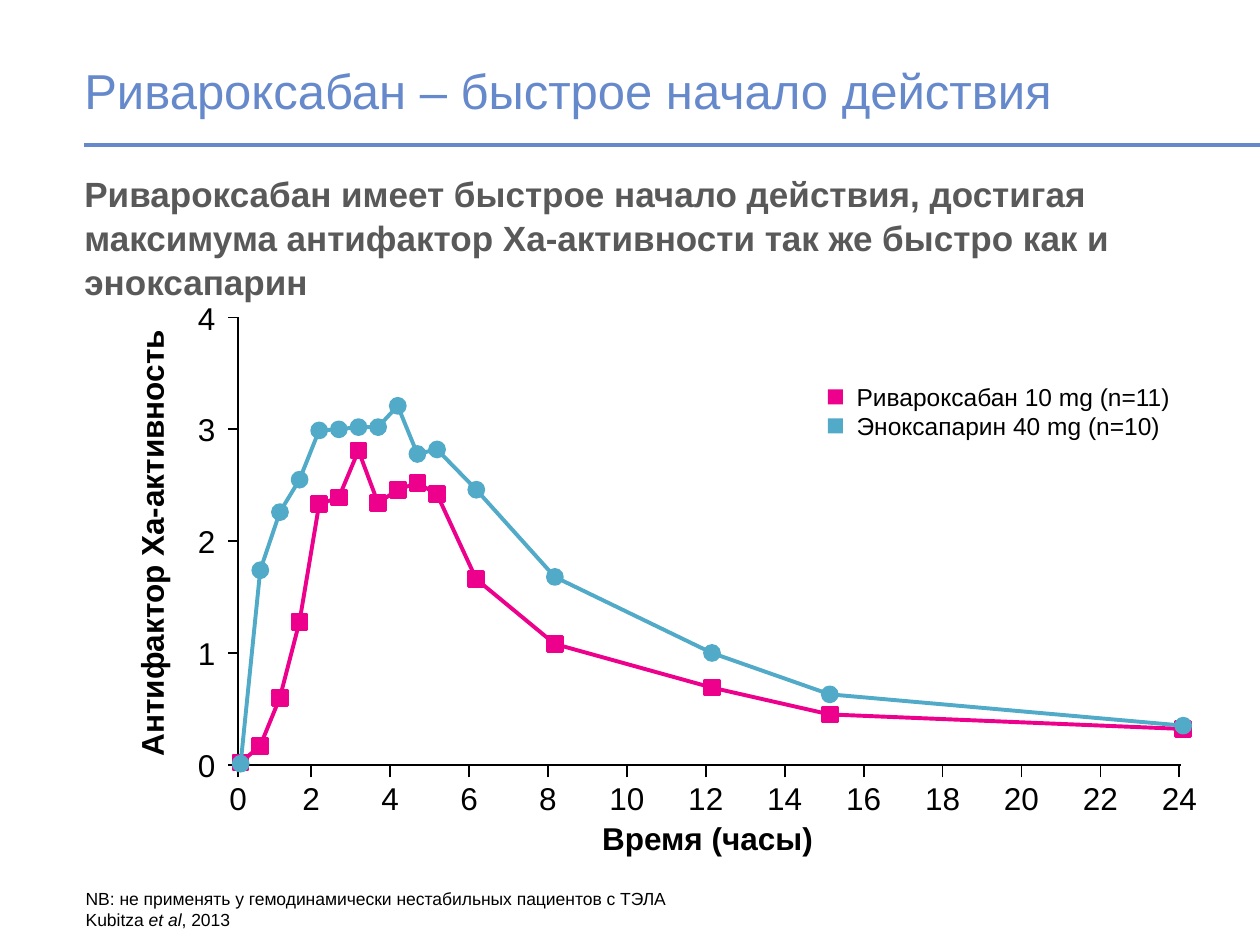
from dataclasses import dataclass

from lxml import etree
from pptx import Presentation
from pptx.dml.color import RGBColor
from pptx.enum.shapes import MSO_CONNECTOR, MSO_SHAPE
from pptx.enum.text import MSO_ANCHOR, MSO_AUTO_SIZE, PP_ALIGN
from pptx.oxml.ns import qn
from pptx.util import Inches, Pt

COLORS = {
    "heading": "6689CC",
    "subtitle": "595959",
    "text": "000000",
    "rivaroxaban": "EC008C",
    "enoxaparin": "50AAC8",
}
MARKER = 0.12
AXIS_X, AXIS_Y, AXIS_TOP, AXIS_RIGHT = 1.89, 6.07, 2.52, 9.37
TICK_LEFT, TICK_BOTTOM = 1.81, 6.17
UNIT_HEIGHT = (AXIS_Y - AXIS_TOP) / 4
HOURS = (0, 0.5, 1, 1.5, 2, 2.5, 3, 3.5, 4, 4.5, 5, 6, 8, 12, 15, 24)


@dataclass(frozen=True)
class Series:
    name: str
    color: str
    marker: MSO_SHAPE
    legend_top: float
    legend_width: float
    values: tuple[float, ...]


SERIES = (
    Series("Ривароксабан 10 mg (n=11)", "rivaroxaban", MSO_SHAPE.RECTANGLE, 3.09, 2.7,
           (0.02, 0.17, 0.6, 1.28, 2.33, 2.39, 2.81, 2.34,
            2.46, 2.52, 2.42, 1.66, 1.08, 0.69, 0.45, 0.32)),
    Series("Эноксапарин 40 mg (n=10)", "enoxaparin", MSO_SHAPE.OVAL, 3.32, 2.62,
           (0.01, 1.74, 2.26, 2.55, 2.99, 3, 3.02, 3.02,
            3.21, 2.78, 2.82, 2.46, 1.68, 1, 0.63, 0.35)),
)

prs = Presentation()
prs.slide_width, prs.slide_height = Inches(10), Inches(7.5)
slide = prs.slides.add_slide(prs.slide_layouts[6])
shapes = slide.shapes


def rgb(name: str) -> RGBColor:
    return RGBColor.from_string(COLORS[name])


def add_text(box: tuple[float, ...], paragraphs: list, size: float, color: str = "text",
             bold: bool = False, align=PP_ALIGN.LEFT, anchor=MSO_ANCHOR.TOP,
             wrap: bool = True, inset: bool = False, grow: bool = True, rotation: float = 0,
             line_spacing: float = 1.0) -> None:
    """Add a text box; each paragraph is a list of (text, italic) runs."""
    area = shapes.add_textbox(*map(Inches, box))
    area.rotation = rotation
    frame = area.text_frame
    layout = {
        "word_wrap": wrap,
        "vertical_anchor": anchor,
        "auto_size": MSO_AUTO_SIZE.SHAPE_TO_FIT_TEXT if grow else MSO_AUTO_SIZE.NONE,
    }
    if not inset:
        layout |= {f"margin_{side}": 0 for side in ("left", "top", "right", "bottom")}
    for attribute, value in layout.items():
        setattr(frame, attribute, value)
    for number, runs in enumerate(paragraphs):
        paragraph = frame.add_paragraph() if number else frame.paragraphs[0]
        paragraph.alignment = align
        paragraph.line_spacing = line_spacing
        for text, italic in runs:
            run = paragraph.add_run()
            run.text = text
            font = {"name": "Arial", "size": Pt(size), "bold": bold, "italic": italic}
            for attribute, value in font.items():
                setattr(run.font, attribute, value)
            run.font.color.rgb = rgb(color)


def add_line(x1: float, y1: float, x2: float, y2: float,
             color: str = "text", width: float = 1) -> None:
    line = shapes.add_connector(MSO_CONNECTOR.STRAIGHT, *map(Inches, (x1, y1, x2, y2)))
    line.line.color.rgb = rgb(color)
    line.line.width = Pt(width)
    etree.SubElement(line._element.spPr, qn("a:effectLst"))


def add_marker(kind: MSO_SHAPE, left: float, top: float, color: str,
               outlined: bool = True) -> None:
    marker = shapes.add_shape(kind, *map(Inches, (left, top, MARKER, MARKER)))
    marker.shadow.inherit = False
    marker.fill.solid()
    marker.fill.fore_color.rgb = rgb(color)
    if outlined:
        marker.line.color.rgb = rgb(color)
        marker.line.width = Pt(1.5)
    else:
        marker.line.fill.background()


def add_legend_entry(series: Series) -> None:
    add_marker(MSO_SHAPE.RECTANGLE, 6.57, series.legend_top, series.color, outlined=False)
    add_text((6.7, series.legend_top - 0.11, series.legend_width, 0.34),
             [[(series.name, False)]], 14, wrap=False, inset=True)


def value_y(value: float) -> float:
    return AXIS_Y - UNIT_HEIGHT * value


def add_axes() -> None:
    add_line(TICK_LEFT, AXIS_Y, AXIS_RIGHT, AXIS_Y)
    add_line(AXIS_X, TICK_BOTTOM, AXIS_X, AXIS_TOP)
    for value in range(5):
        y = value_y(value)
        if value:
            add_line(TICK_LEFT, y, AXIS_X, y)
        add_text((1.57, y - 0.15, 0.14, 0.3), [[(str(value), False)]], 18,
                 anchor=MSO_ANCHOR.MIDDLE, wrap=False)
    for hour in range(0, 25, 2):
        # The first interval is slightly shorter than the others.
        x = 2.47 + (hour - 2) * 6.89 / 22 if hour else AXIS_X
        if hour:
            add_line(x, TICK_BOTTOM, x, AXIS_Y)
        width = 0.14 * len(str(hour))
        add_text((x - width / 2, 6.18, width, 0.3), [[(str(hour), False)]], 18,
                 align=PP_ALIGN.CENTER, wrap=False)
    add_text((-0.93, 4.16, 4.26, 0.3), [[("Антифактор Ха-активность", False)]], 18,
             bold=True, align=PP_ALIGN.CENTER, rotation=270)
    add_text((4.77, 6.5, 1.69, 0.3), [[("Время (часы)", False)]], 18,
             bold=True, align=PP_ALIGN.CENTER, wrap=False)


def add_curve(series: Series) -> None:
    points = [(1.91 + 0.3117 * hour, value_y(value))
              for hour, value in zip(HOURS, series.values)]
    start, *rest = [(Inches(x), Inches(y)) for x, y in points]
    builder = shapes.build_freeform(*start)
    builder.add_line_segments(rest, close=False)
    curve = builder.convert_to_shape()
    curve.shadow.inherit = False
    curve.fill.background()
    curve.line.color.rgb = rgb(series.color)
    curve.line.width = Pt(2.25)
    for x, y in points:
        add_marker(series.marker, x - MARKER / 2, y - MARKER / 2, series.color)


add_line(0.67, 1.15, 10, 1.15, "heading", 2.25)
add_text((0.67, 0.48, 9.06, 0.47), [[("Ривароксабан – быстрое начало действия", False)]],
         28, "heading", anchor=MSO_ANCHOR.BOTTOM)
add_text((0.67, 1.35, 9.06, 0.43),
         [[("Ривароксабан имеет быстрое начало действия, достигая максимума "
            "антифактор Ха-активности так же быстро как и эноксапарин", False)]],
         20, "subtitle", bold=True, grow=False, line_spacing=1.05)
for entry in SERIES:
    add_legend_entry(entry)
add_axes()
for entry in SERIES:
    add_curve(entry)
add_text((0.68, 7.04, 9.05, 0.34),
         [[("NB: не применять у гемодинамически нестабильных пациентов с ТЭЛА", False)],
          [("Kubitza ", False), ("et al", True), (", 2013", False)]],
         10, anchor=MSO_ANCHOR.BOTTOM)

prs.save("out.pptx")
